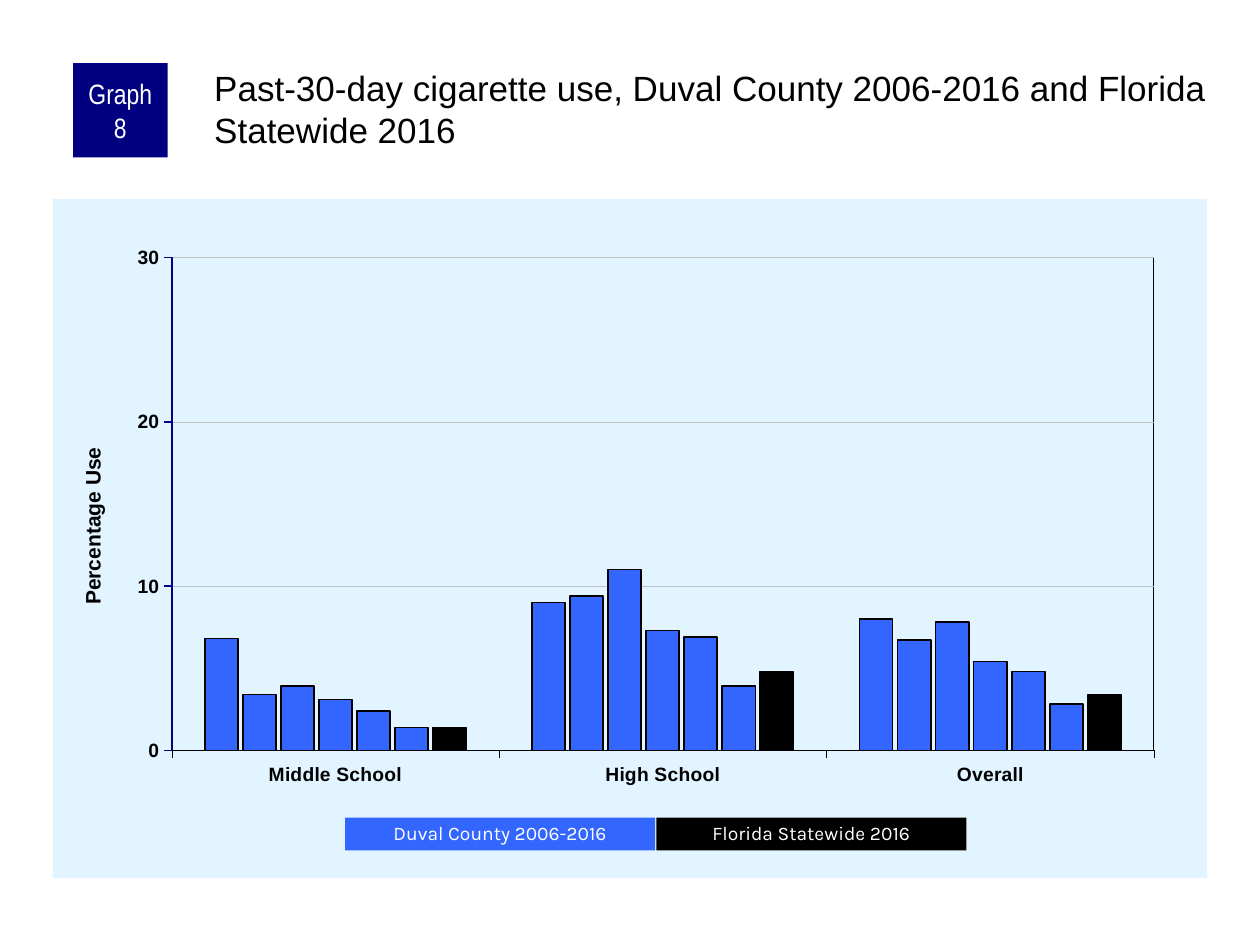
from dataclasses import dataclass

from lxml.etree import SubElement
from pptx import Presentation
from pptx.chart.data import CategoryChartData
from pptx.dml.color import RGBColor
from pptx.enum.chart import XL_CHART_TYPE, XL_TICK_MARK
from pptx.enum.shapes import MSO_SHAPE
from pptx.enum.text import MSO_ANCHOR, PP_ALIGN
from pptx.oxml import parse_xml
from pptx.oxml.ns import nsdecls, qn
from pptx.util import Inches, Pt

BLACK = RGBColor(0x00, 0x00, 0x00)
WHITE = RGBColor(0xFF, 0xFF, 0xFF)
NAVY = RGBColor(0x00, 0x00, 0x80)
BLUE = RGBColor(0x33, 0x66, 0xFF)
PALE_BLUE = RGBColor(0xE1, 0xF4, 0xFF)
GRAY = RGBColor(0xC0, 0xC0, 0xC0)

CATEGORIES = ["Middle School", "High School", "Overall"]
COUNTY_VALUES = [(6.8, 9, 8), (3.4, 9.4, 6.7), (3.9, 11, 7.8),
                 (3.1, 7.3, 5.4), (2.4, 6.9, 4.8), (1.4, 3.9, 2.8)]
STATE_VALUES = (1.4, 4.8, 3.4)


@dataclass
class Label:
    text: str
    left: float
    top: float
    width: float
    height: float
    fill: RGBColor
    font: str
    size: float
    spacing: float = 1.0
    margin: float = 0.1


LABELS = [
    Label("Graph 8", 0.58, 0.5, 0.75, 0.75, NAVY, "Arial Narrow", 16, margin=0.05),
    Label("Duval County 2006-2016", 2.74, 6.49, 2.46, 0.26, BLUE, "Karla", 11, 0.9),
    Label("Florida Statewide 2016", 5.21, 6.49, 2.46, 0.26, BLACK, "Karla", 11, 0.9),
]


def write_text(frame, text: str, *, font: str, size: float, color: RGBColor,
               align=PP_ALIGN.LEFT, anchor=MSO_ANCHOR.TOP, spacing: float = 1.0,
               margins: tuple = (0, 0, 0, 0)) -> None:
    frame.word_wrap = True
    frame.vertical_anchor = anchor
    (frame.margin_left, frame.margin_top,
     frame.margin_right, frame.margin_bottom) = map(Inches, margins)
    para = frame.paragraphs[0]
    para.alignment = align
    para.line_spacing = spacing
    para.space_before = Pt(0)
    span = para.add_run()
    span.text = text
    format_font(span.font, size, color, font=font)


def format_font(font_format, size: float, color: RGBColor, *,
                font: str = "Arial", bold: bool = False) -> None:
    font_format.name = font
    font_format.size = Pt(size)
    font_format.bold = bold
    font_format.color.rgb = color


def format_line(line, color: RGBColor, width: float) -> None:
    line.color.rgb = color
    line.width = Pt(width)


def draw_label(page, label: Label) -> None:
    box = page.shapes.add_shape(
        MSO_SHAPE.RECTANGLE, Inches(label.left), Inches(label.top),
        Inches(label.width), Inches(label.height))
    box.shadow.inherit = False
    box.fill.solid()
    box.fill.fore_color.rgb = label.fill
    box.line.fill.background()
    write_text(box.text_frame, label.text, font=label.font, size=label.size,
               color=WHITE, align=PP_ALIGN.CENTER, anchor=MSO_ANCHOR.MIDDLE,
               spacing=label.spacing, margins=(label.margin, 0, label.margin, 0))


def set_layout(parent, position: int, **settings) -> None:
    """Give a chart part a manual layout, such as x=0.1 or layoutTarget="inner"."""
    for old in parent.findall(qn("c:layout")):
        parent.remove(old)
    layout = parse_xml(f"<c:layout {nsdecls('c')}/>")
    manual = SubElement(layout, qn("c:manualLayout"))
    for name, value in settings.items():
        SubElement(manual, qn(f"c:{name}")).set("val", str(value))
    parent.insert(position, layout)


def area_format(fill: str, line: str):
    return parse_xml(f"<c:spPr {nsdecls('c', 'a')}>{fill}{line}</c:spPr>")


def format_axis(axis, color: RGBColor, width: float) -> None:
    axis.major_tick_mark = XL_TICK_MARK.OUTSIDE
    axis.minor_tick_mark = XL_TICK_MARK.NONE
    format_font(axis.tick_labels.font, 11, BLACK, bold=True)
    format_line(axis.format.line, color, width)


def draw_chart(page) -> None:
    data = CategoryChartData()
    data.categories = CATEGORIES
    for number, values in enumerate([*COUNTY_VALUES, STATE_VALUES], start=1):
        data.add_series(f"Series {number}", values)
    chart = page.shapes.add_chart(
        XL_CHART_TYPE.COLUMN_CLUSTERED, Inches(0.42), Inches(1.58),
        Inches(9.16), Inches(5.39), data).chart
    chart.has_title = False
    chart.has_legend = False
    format_font(chart.font, 8, BLACK)

    # Columns
    plot = chart.plots[0]
    plot.gap_width = 200
    plot.overlap = -15
    plot.vary_by_categories = False
    for index, series in enumerate(plot.series):
        series.invert_if_negative = False
        series.format.fill.solid()
        series.format.fill.fore_color.rgb = BLUE if index < len(COUNTY_VALUES) else BLACK
        format_line(series.format.line, BLACK, 1)

    # Axes
    format_axis(chart.category_axis, BLACK, 0.25)
    value_axis = chart.value_axis
    format_axis(value_axis, NAVY, 1)
    value_axis.minimum_scale = 0
    value_axis.maximum_scale = 30
    value_axis.major_unit = 10
    format_line(value_axis.major_gridlines.format.line, GRAY, 0.25)
    title = value_axis.axis_title
    span = title.text_frame.paragraphs[0].add_run()
    span.text = "Percentage Use"
    format_font(span.font, 12, BLACK, bold=True)
    set_layout(title._element, 1, xMode="edge", yMode="edge", x=0.02, y=0.36)

    # Plot frame and chart background
    space = chart._chartSpace
    plot_area = space.chart.plotArea
    set_layout(plot_area, 0, layoutTarget="inner", xMode="edge", yMode="edge",
               x=0.103, y=0.086, w=0.851, h=0.726)
    black_fill = f'<a:solidFill><a:srgbClr val="{BLACK}"/></a:solidFill>'
    plot_area.append(area_format("<a:noFill/>", f'<a:ln w="{Pt(0.5)}">{black_fill}</a:ln>'))
    space.chart.addnext(area_format(
        f'<a:solidFill><a:srgbClr val="{PALE_BLUE}"/></a:solidFill>',
        "<a:ln><a:noFill/></a:ln>"))


def draw_title(page) -> None:
    box = page.shapes.title
    box.left, box.top = Inches(1.67), Inches(0.5)
    box.width, box.height = Inches(7.92), Inches(0.83)
    write_text(box.text_frame,
               "Past-30-day cigarette use, Duval County 2006-2016 and Florida Statewide 2016",
               font="Arial", size=20, color=BLACK, margins=(0.03, 0.03, 0, 0))


def main() -> None:
    deck = Presentation()
    deck.slide_width, deck.slide_height = Inches(10), Inches(7.5)
    page = deck.slides.add_slide(deck.slide_layouts.get_by_name("Title Only"))
    draw_chart(page)
    draw_title(page)
    for label in LABELS:
        draw_label(page, label)
    deck.save("out.pptx")


if __name__ == "__main__":
    main()
